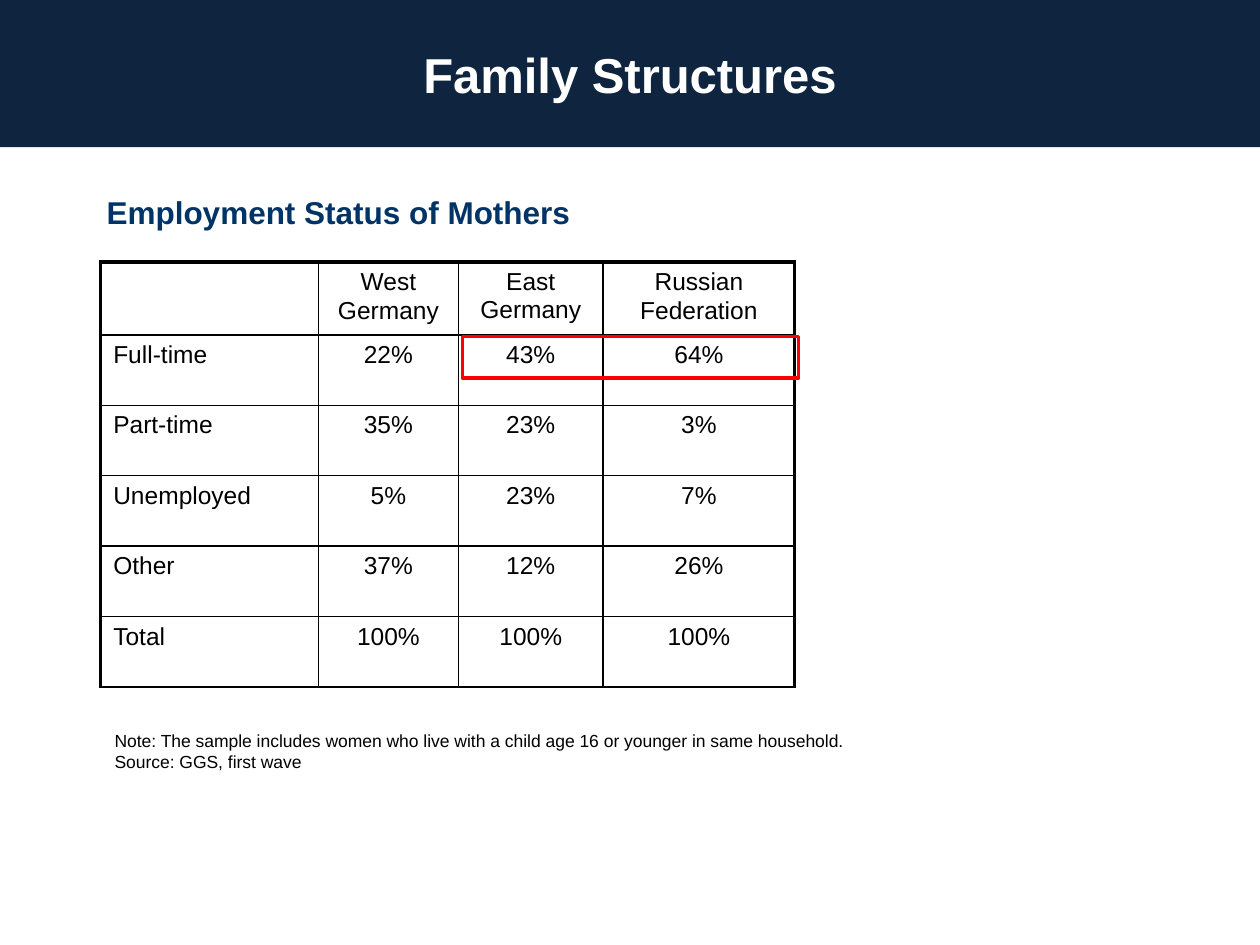
from lxml import etree
from pptx import Presentation
from pptx.dml.color import RGBColor
from pptx.enum.shapes import MSO_SHAPE
from pptx.enum.text import MSO_ANCHOR, MSO_AUTO_SIZE, PP_ALIGN
from pptx.oxml.ns import qn
from pptx.util import Cm, Pt

RECT = MSO_SHAPE.RECTANGLE
MIDDLE = MSO_ANCHOR.MIDDLE
FIT_SHAPE = MSO_AUTO_SIZE.SHAPE_TO_FIT_TEXT
LEFT, CENTER = PP_ALIGN.LEFT, PP_ALIGN.CENTER

COLORS = {"navy": "0F243E", "blue": "003366", "red": "FF0000",
          "black": "000000", "white": "FFFFFF"}

HEADERS = ["", "West\nGermany", "East Germany", "Russian\nFederation"]
ROWS = [
    ["Full-time", "22%", "43%", "64%"],
    ["Part-time", "35%", "23%", "3%"],
    ["Unemployed", "5%", "23%", "7%"],
    ["Other", "37%", "12%", "26%"],
    ["Total", "100%", "100%", "100%"],
]
COL_WIDTHS = [4.39, 2.82, 2.92, 3.86]
ROW_HEIGHTS = [1.47] + [1.42] * len(ROWS)


class SlideBuilder:
    font = "Arial"
    thin, thick = 1, 2.25

    def __init__(self, slide):
        self.s = slide

    def color(self, name):
        return RGBColor.from_string(COLORS[name])

    def set_text(self, tf, text, size, color, bold=False, align=LEFT,
                 before=0, spacing=None):
        for i, line in enumerate(text.split("\n")):
            p = tf.paragraphs[0] if i == 0 else tf.add_paragraph()
            p.text = line
            p.alignment = align
            p.space_before = Pt(before)
            p.line_spacing = spacing
            p.font.name = self.font
            p.font.size = Pt(size)
            p.font.bold = bold
            p.font.color.rgb = self.color(color)

    def text(self, x, y, w, h, text, size, color, **style):
        tf = self.s.shapes.add_textbox(Cm(x), Cm(y), Cm(w), Cm(h)).text_frame
        tf.word_wrap = False
        tf.auto_size = FIT_SHAPE
        self.set_text(tf, text, size, color, **style)

    def rect(self, x, y, w, h, fill=None, line=None, width=2):
        sp = self.s.shapes.add_shape(RECT, Cm(x), Cm(y), Cm(w), Cm(h))
        sp.shadow.inherit = False
        if fill:
            sp.fill.solid()
            sp.fill.fore_color.rgb = self.color(fill)
        else:
            sp.fill.background()
        if line:
            sp.line.color.rgb = self.color(line)
            sp.line.width = Pt(width)
        else:
            sp.line.fill.background()
        return sp

    def banner(self, x, y, w, h, text):
        tf = self.rect(x, y, w, h, fill="navy").text_frame
        tf.vertical_anchor = MIDDLE
        self.set_text(tf, text, 28, "white", bold=True, align=CENTER)

    def borders(self, cell, widths):
        tc_pr = cell._tc.get_or_add_tcPr()
        for side, width in widths.items():
            ln = etree.SubElement(tc_pr, qn(f"a:ln{side}"), w=str(Pt(width)))
            fill = etree.SubElement(ln, qn("a:solidFill"))
            etree.SubElement(fill, qn("a:srgbClr"), val=COLORS["black"])

    def table(self, x, y, col_widths, row_heights, data):
        frame = self.s.shapes.add_table(
            len(row_heights), len(col_widths), Cm(x), Cm(y),
            Cm(sum(col_widths)), Cm(sum(row_heights)))
        table = frame.table
        table.first_row = table.horz_banding = False
        for col, width in zip(table.columns, col_widths):
            col.width = Cm(width)
        for row, height in zip(table.rows, row_heights):
            row.height = Cm(height)
        last = len(col_widths) - 1
        for r, values in enumerate(data):
            for c, value in enumerate(values):
                cell = table.cell(r, c)
                # Heavy outline on the left, right and top only
                self.borders(cell, {
                    "L": self.thick if c == 0 else self.thin,
                    "R": self.thick if c == last else self.thin,
                    "T": self.thick if r == 0 else self.thin,
                    "B": self.thin})
                cell.fill.background()
                self.set_text(cell.text_frame, value, 14, "black", before=0.7,
                              align=CENTER if c else LEFT)


def main():
    prs = Presentation()
    prs.slide_width, prs.slide_height = Cm(25.4), Cm(19.05)
    b = SlideBuilder(prs.slides.add_slide(prs.slide_layouts[6]))

    # Employment table
    b.table(2.03, 5.28, COL_WIDTHS, ROW_HEIGHTS, [HEADERS] + ROWS)

    # Subtitle
    b.text(1.9, 3.38, 10.03, 1.9, "Employment Status of Mothers", 18, "blue",
           bold=True, spacing=1.5)

    # Highlight around the full-time shares
    b.rect(9.32, 6.78, 6.78, 0.84, line="red")

    # Note and source
    b.text(2.06, 14.6, 15.32, 1.12,
           "Note: The sample includes women who live with a child age 16 or "
           "younger in same household.\nSource: GGS, first wave", 10, "black")

    # Title banner
    b.banner(0, 0, 25.4, 2.97, "Family Structures")

    prs.save("out.pptx")


if __name__ == "__main__":
    main()
